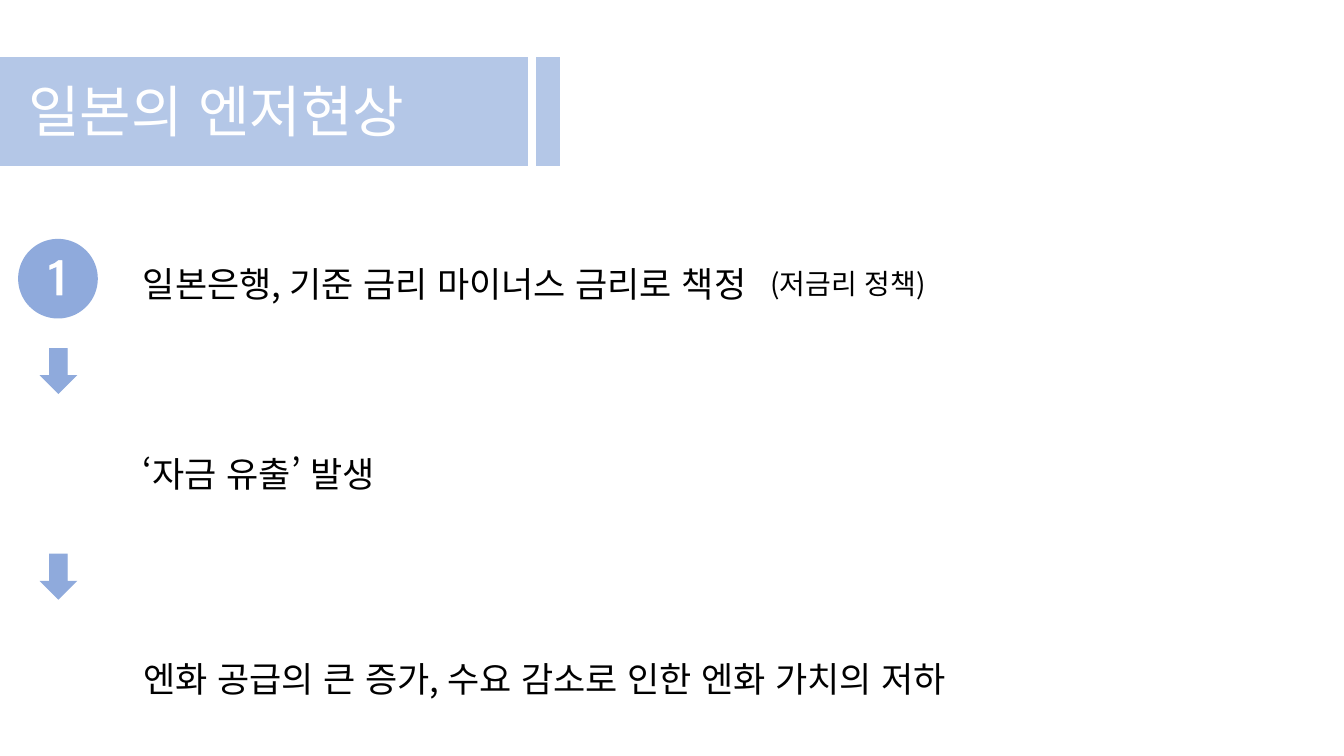
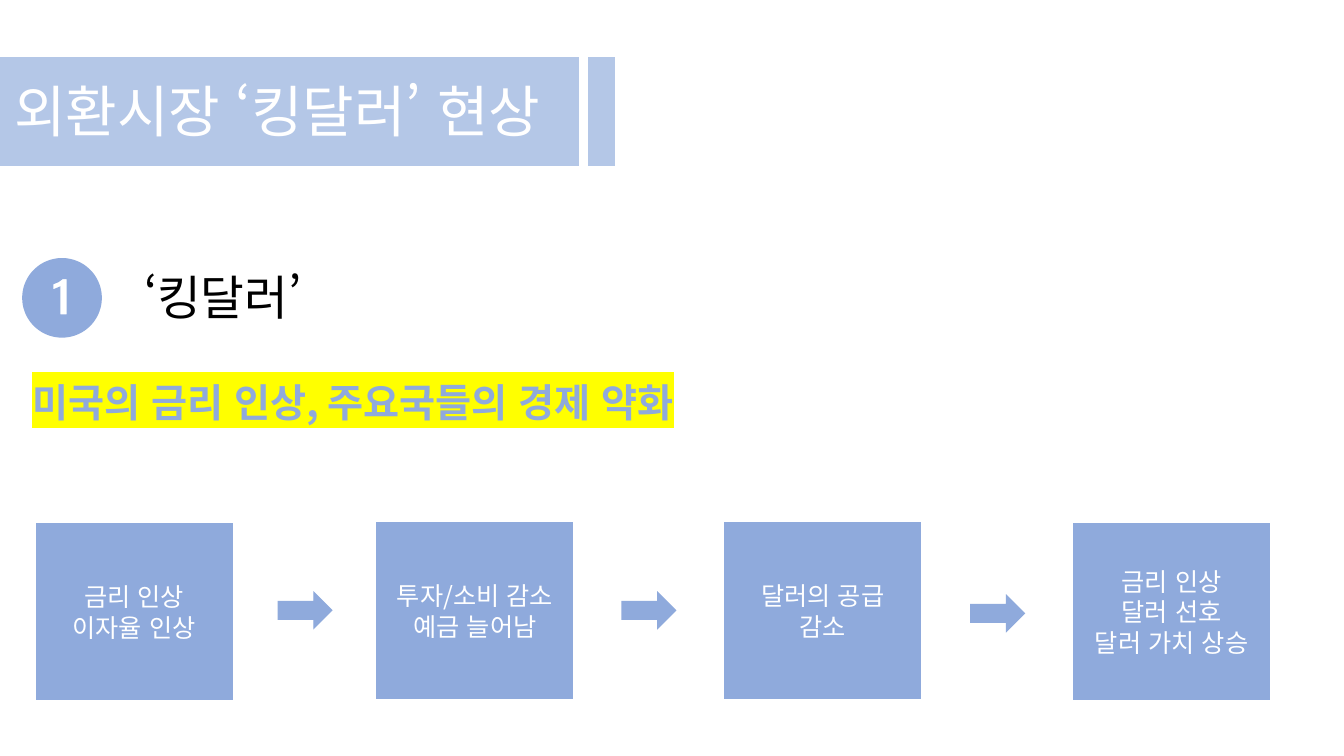
from dataclasses import dataclass
from math import cos, pi, sin

from lxml import etree
from pptx import Presentation
from pptx.dml.color import RGBColor
from pptx.enum.lang import MSO_LANGUAGE_ID
from pptx.enum.shapes import MSO_SHAPE
from pptx.enum.text import MSO_ANCHOR, MSO_AUTO_SIZE, PP_ALIGN
from pptx.oxml.ns import qn
from pptx.util import Inches, Pt

RECTANGLE = MSO_SHAPE.RECTANGLE
DOWN_ARROW = MSO_SHAPE.DOWN_ARROW
RIGHT_ARROW = MSO_SHAPE.RIGHT_ARROW
TOP, MIDDLE = MSO_ANCHOR.TOP, MSO_ANCHOR.MIDDLE
LEFT, CENTER = PP_ALIGN.LEFT, PP_ALIGN.CENTER
FIT_TEXT = MSO_AUTO_SIZE.SHAPE_TO_FIT_TEXT
KOREAN = MSO_LANGUAGE_ID.KOREAN

FONT = "Noto Sans CJK KR"
BAND_BLUE = RGBColor(0xB4, 0xC7, 0xE7)
BLUE = RGBColor(0x8F, 0xAA, 0xDC)
WHITE = RGBColor(0xFF, 0xFF, 0xFF)
BLACK = RGBColor(0x00, 0x00, 0x00)
YELLOW = RGBColor(0xFF, 0xFF, 0x00)

TITLE_ONLY = 5
BAND_TOP, BAND_HEIGHT = 0.57, 1.07
BADGE_SIZE, BADGE_STEPS = 0.79, 90
# Outline of the numeral, measured from the badge's corner
NUMERAL_ONE = [(0.44, 0.56), (0.44, 0.21), (0.4, 0.21), (0.36, 0.24), (0.31, 0.26),
               (0.31, 0.31), (0.38, 0.28), (0.38, 0.56)]


@dataclass
class Area:
    left: float
    top: float
    width: float
    height: float

    def lengths(self) -> list:
        return [Inches(n) for n in (self.left, self.top, self.width, self.height)]


@dataclass
class Header:
    title: str
    title_area: Area
    band_width: float
    stripe_left: float
    stripe_width: float


@dataclass
class Label:
    text: str
    area: Area
    size: int = 25
    color: RGBColor = BLACK
    bold: bool = False
    highlight: RGBColor | None = None


@dataclass
class Step:
    text: str
    left: float
    top: float


def format_text(frame, size: int, color: RGBColor, align=LEFT, bold: bool = False) -> None:
    frame.word_wrap = True
    for para in frame.paragraphs:
        para.alignment = align
        for span in para.runs:
            span.font.size = Pt(size)
            span.font.bold = bold
            span.font.color.rgb = color
            span.font.name = FONT
            # Korean glyph forms keep the quotation marks narrow
            span.font.language_id = KOREAN
            latin = span.font._element.find(qn("a:latin"))
            latin.addnext(etree.Element(qn("a:ea"), typeface=FONT))


def highlight_text(frame, color: RGBColor) -> None:
    for para in frame.paragraphs:
        for span in para.runs:
            mark = etree.Element(qn("a:highlight"))
            etree.SubElement(mark, qn("a:srgbClr"), val=str(color))
            span.font._element.find(qn("a:solidFill")).addnext(mark)


def add_block(page, kind, area: Area, color: RGBColor):
    block = page.shapes.add_shape(kind, *area.lengths())
    block.shadow.inherit = False
    block.fill.solid()
    block.fill.fore_color.rgb = color
    block.line.color.rgb = color
    block.line.width = Pt(1)
    # Sharp corners on the outline
    outline = block.element.spPr.find(qn("a:ln"))
    etree.SubElement(outline, qn("a:miter"), lim="800000")
    return block


def add_label(page, label: Label) -> None:
    box = page.shapes.add_textbox(*label.area.lengths())
    frame = box.text_frame
    frame.text = label.text
    frame.auto_size = FIT_TEXT
    format_text(frame, label.size, label.color, bold=label.bold)
    if label.highlight is not None:
        highlight_text(frame, label.highlight)


def add_badge(page, left: float, top: float) -> None:
    """Draw a disc with the numeral 1 cut out."""
    radius = BADGE_SIZE / 2
    angles = [2 * pi * step / BADGE_STEPS for step in range(BADGE_STEPS)]
    disc = [(radius + radius * cos(a), radius + radius * sin(a)) for a in angles]
    contours = [[(Inches(left + x), Inches(top + y)) for x, y in outline]
                for outline in (disc, NUMERAL_ONE)]
    builder = page.shapes.build_freeform(*contours[0][0])
    builder.add_line_segments(contours[0][1:])
    builder.move_to(*contours[1][0])
    builder.add_line_segments(contours[1][1:])
    badge = builder.convert_to_shape()
    badge.shadow.inherit = False
    badge.fill.solid()
    badge.fill.fore_color.rgb = BLUE
    badge.line.fill.background()


def add_step(page, step: Step) -> None:
    block = add_block(page, RECTANGLE, Area(step.left, step.top, 1.94, 1.74), BLUE)
    frame = block.text_frame
    frame.text = step.text
    frame.vertical_anchor = MIDDLE
    format_text(frame, 18, WHITE, CENTER)


def add_page(deck, header: Header):
    page = deck.slides.add_slide(deck.slide_layouts[TITLE_ONLY])
    for left, width in ((0, header.band_width), (header.stripe_left, header.stripe_width)):
        add_block(page, RECTANGLE, Area(left, BAND_TOP, width, BAND_HEIGHT), BAND_BLUE)
    title = page.shapes.title
    title.left, title.top, title.width, title.height = header.title_area.lengths()
    frame = title.text_frame
    frame.text = header.title
    frame.vertical_anchor = TOP
    frame.auto_size = FIT_TEXT
    format_text(frame, 40, WHITE)
    # Bring the title in front of its band
    title.element.getparent().append(title.element)
    return page


def build_weak_yen(deck) -> None:
    page = add_page(deck, Header("일본의 엔저현상", Area(0.18, 0.71, 4.68, 0.77),
                                 5.23, 5.32, 0.23))
    add_badge(page, 0.18, 2.37)
    for label in (
        Label("일본은행, 기준 금리 마이너스 금리로 책정", Area(1.32, 2.55, 6.87, 0.52)),
        Label("(저금리 정책)", Area(7.54, 2.59, 2.43, 0.44), size=20),
        Label("‘자금 유출’ 발생", Area(1.32, 4.44, 7.9, 0.52)),
        Label("엔화 공급의 큰 증가, 수요 감소로 인한 엔화 가치의 저하",
              Area(1.32, 6.47, 9.25, 0.52)),
    ):
        add_label(page, label)
    for top in (3.46, 5.5):
        add_block(page, DOWN_ARROW, Area(0.41, top, 0.34, 0.44), BLUE)


def build_king_dollar(deck) -> None:
    page = add_page(deck, Header("외환시장 ‘킹달러’ 현상", Area(0.04, 0.71, 6.43, 0.77),
                                 5.74, 5.84, 0.25))
    add_badge(page, 0.22, 2.56)
    add_label(page, Label("‘킹달러’", Area(1.33, 2.61, 6.22, 0.67), size=34))
    add_label(page, Label("미국의 금리 인상, 주요국들의 경제 약화", Area(0.22, 3.7, 8.16, 0.57),
                          size=28, color=BLUE, bold=True, highlight=YELLOW))
    # Chain of effects
    for step in (
        Step("금리 인상\n이자율 인상", 0.36, 5.2),
        Step("투자/소비 감소\n예금 늘어남", 3.74, 5.19),
        Step("달러의 공급\n감소", 7.19, 5.19),
        Step("금리 인상\n달러 선호\n달러 가치 상승", 10.65, 5.2),
    ):
        add_step(page, step)
    for left, top in ((2.76, 5.88), (6.17, 5.88), (9.63, 5.91)):
        add_block(page, RIGHT_ARROW, Area(left, top, 0.53, 0.35), BLUE)


def main() -> None:
    deck = Presentation()
    deck.slide_width, deck.slide_height = Inches(13.33), Inches(7.5)
    build_weak_yen(deck)
    build_king_dollar(deck)
    deck.save("out.pptx")


if __name__ == "__main__":
    main()
